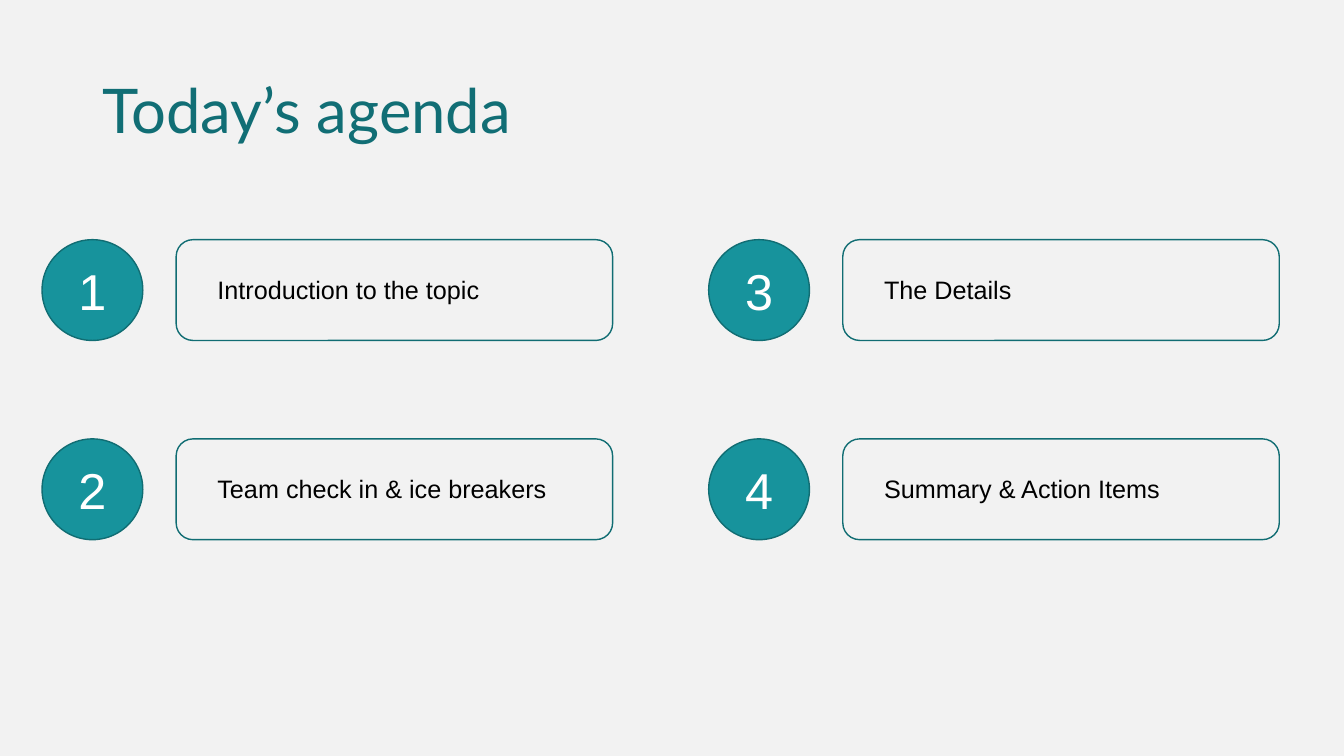
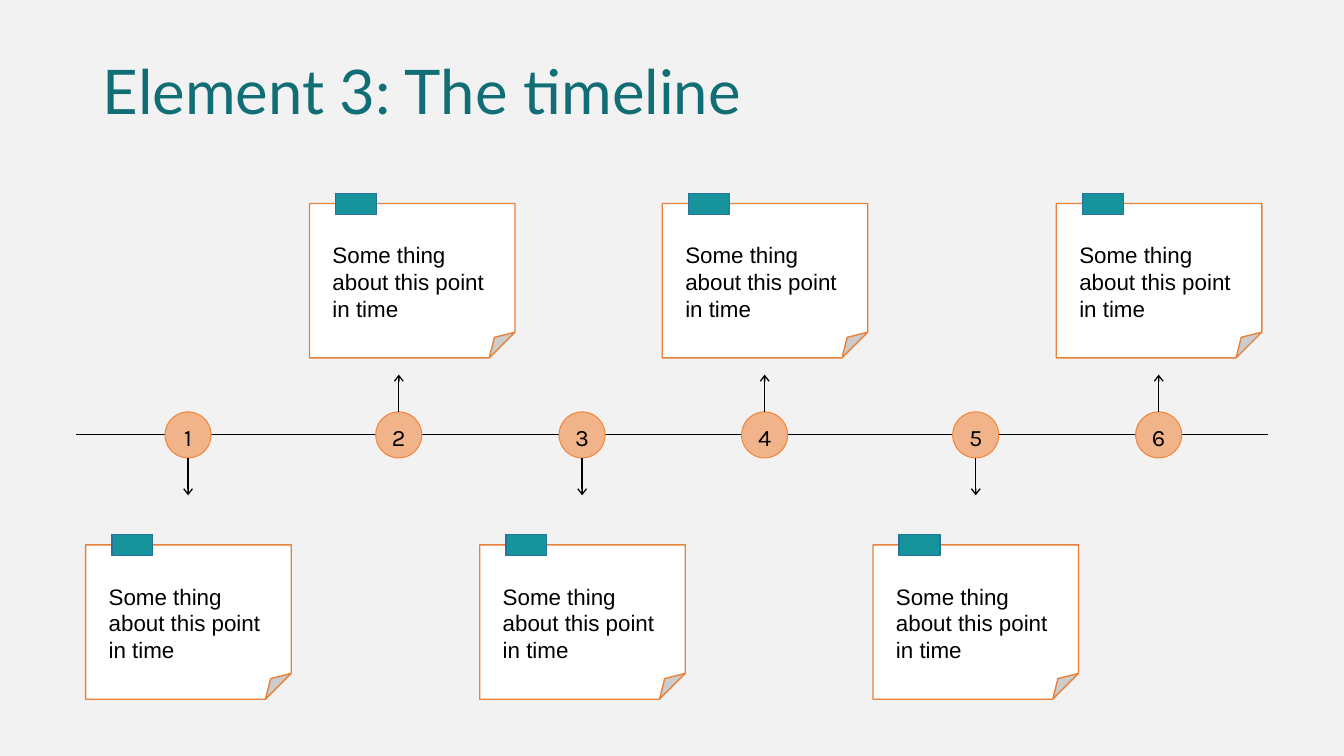
from lxml.etree import SubElement
from pptx import Presentation
from pptx.dml.color import RGBColor
from pptx.enum.shapes import MSO_CONNECTOR as Connector, MSO_SHAPE as Shape
from pptx.enum.text import MSO_ANCHOR as Anchor, PP_ALIGN as Align
from pptx.oxml.ns import qn
from pptx.util import Cm, Pt

AGENDA = [
    "Introduction to the topic",
    "Team check in & ice breakers",
    "The Details",
    "Summary & Action Items",
]
NOTE_TEXT = "Some thing about this point in time"
MARKERS = [4.74, 10.05, 14.67, 19.27, 24.59, 29.2]
NOTE_LEFTS = [2.16, 7.8, 12.09, 16.69, 22, 26.62]
AXIS_TOP = 10.96


def color(value):
    return RGBColor.from_string(value)


class Board:
    BACKGROUND = "F2F2F2"
    TITLE = "116E75"
    TEAL = "17939C"
    DARK_TEAL = "116D73"
    TAPE_EDGE = "24739E"
    PEACH = "F1B389"
    MARKER_EDGE = "F5853A"
    NOTE_EDGE = "E8813A"
    BLACK = "000000"
    WHITE = "FFFFFF"
    MARKER_SIZE = 1.16
    ARROW_REACH = 1.52

    def __init__(self):
        self.deck = Presentation()
        self.deck.slide_width = Cm(33.87)
        self.deck.slide_height = Cm(19.05)
        self.slide = None

    def page(self, title, title_height):
        self.slide = self.deck.slides.add_slide(self.deck.slide_layouts[6])
        fill = self.slide.background.fill
        fill.solid()
        fill.fore_color.rgb = color(self.BACKGROUND)
        para = self.text(title, 2.34, 1.02, 29.2, title_height, 44,
                         self.TITLE, "Lato", Anchor.MIDDLE)
        para.line_spacing = 0.9

    def set_text(self, frame, text, size, ink, font="Arial", anchor=Anchor.TOP, align=Align.LEFT):
        frame.word_wrap = True
        frame.vertical_anchor = anchor
        para = frame.paragraphs[0]
        para.text = text
        para.alignment = align
        para.font.name = font
        para.font.size = Pt(size)
        para.font.color.rgb = color(ink)
        return para

    def text(self, text, left, top, width, height, size, ink=BLACK, font="Arial", anchor=Anchor.TOP):
        box = self.slide.shapes.add_textbox(Cm(left), Cm(top), Cm(width), Cm(height))
        return self.set_text(box.text_frame, text, size, ink, font, anchor)

    def shape(self, kind, left, top, width, height, edge, fill=None, weight=1):
        shape = self.slide.shapes.add_shape(kind, Cm(left), Cm(top), Cm(width), Cm(height))
        shape.shadow.inherit = False
        if fill:
            shape.fill.solid()
            shape.fill.fore_color.rgb = color(fill)
        else:
            shape.fill.background()
        shape.line.color.rgb = color(edge)
        shape.line.width = Pt(weight)
        return shape

    def line(self, start, end, weight, arrow=False):
        line = self.slide.shapes.add_connector(
            Connector.STRAIGHT, *(Cm(value) for value in (*start, *end)))
        line.line.color.rgb = color(self.BLACK)
        line.line.width = Pt(weight)
        properties = line._element.spPr
        if arrow:
            SubElement(properties.find(qn("a:ln")), qn("a:tailEnd"), type="arrow", w="med", len="sm")
        SubElement(properties, qn("a:effectLst"))

    def agenda_item(self, number, text, left, top):
        circle = self.shape(Shape.OVAL, left, top, 2.54, 2.54, self.DARK_TEAL, self.TEAL)
        self.set_text(circle.text_frame, str(number), 36, self.WHITE,
                      anchor=Anchor.MIDDLE, align=Align.CENTER)
        self.shape(Shape.ROUNDED_RECTANGLE, left + 3.38, top, 11, 2.54, self.DARK_TEAL)
        self.text(text, left + 4.17, top + 0.74, 9.42, 1.02, 18)

    def marker(self, number, center, direction):
        radius = self.MARKER_SIZE / 2
        circle = self.shape(Shape.OVAL, center - radius, AXIS_TOP - radius, self.MARKER_SIZE,
                            self.MARKER_SIZE, self.MARKER_EDGE, self.PEACH, 0.75)
        frame = circle.text_frame
        frame.margin_left = frame.margin_right = frame.margin_top = frame.margin_bottom = 0
        para = self.set_text(frame, str(number), 16.8, self.BLACK, "Karla",
                             Anchor.MIDDLE, Align.CENTER)
        para.line_spacing = Pt(23.5)
        self.line((center, AXIS_TOP + direction * radius),
                  (center, AXIS_TOP + direction * self.ARROW_REACH), 1, arrow=True)

    def note(self, text, left, top):
        self.shape(Shape.FOLDED_CORNER, left, top, 5.18, 3.89, self.NOTE_EDGE, self.WHITE)
        self.text(text, left + 0.33, top + 0.83, 4.52, 2.31, 16)
        self.shape(Shape.RECTANGLE, left + 0.66, top - 0.26, 1.03, 0.53, self.TAPE_EDGE, self.TEAL)


def main():
    board = Board()

    board.page("Today’s agenda", 3.68)
    for index, topic in enumerate(AGENDA):
        column, row = divmod(index, 2)
        board.agenda_item(index + 1, topic, 1.06 + 16.8 * column, 6.04 + 5.02 * row)

    board.page("Element 3: The timeline", 2.72)
    board.line((1.91, AXIS_TOP), (31.96, AXIS_TOP), 0.75)
    for number, (center, left) in enumerate(zip(MARKERS, NOTE_LEFTS), 1):
        below = number % 2 == 1
        board.marker(number, center, 1 if below else -1)
        board.note(NOTE_TEXT, left, 13.73 if below else 5.13)

    board.deck.save("out.pptx")


if __name__ == "__main__":
    main()
